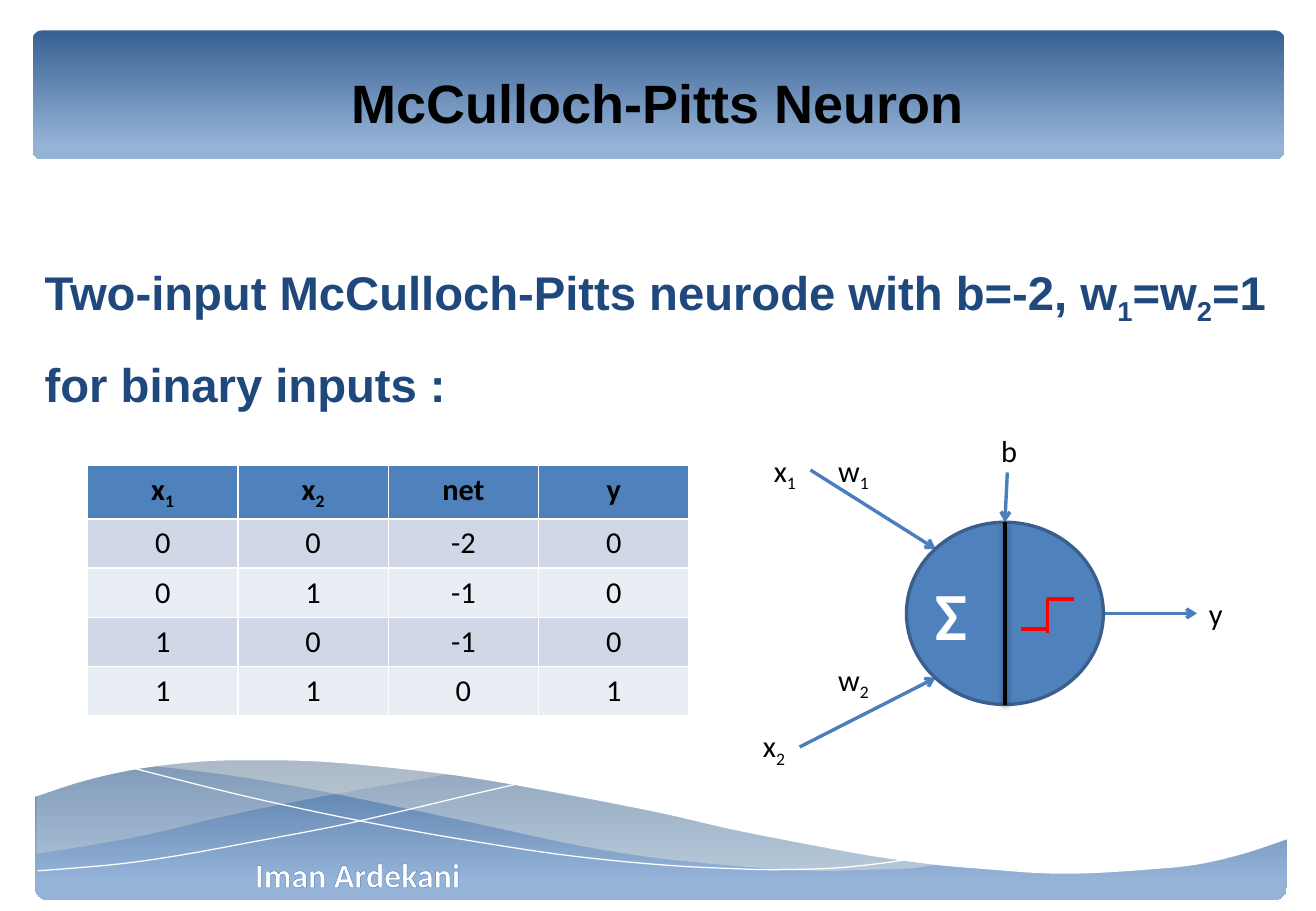
from lxml import etree
from pptx import Presentation
from pptx.dml.color import RGBColor
from pptx.enum.shapes import MSO_CONNECTOR, MSO_SHAPE
from pptx.enum.text import MSO_ANCHOR, PP_ALIGN
from pptx.oxml.ns import qn
from pptx.util import Inches, Pt

STRAIGHT = MSO_CONNECTOR.STRAIGHT
ROUNDED, OVAL = MSO_SHAPE.ROUNDED_RECTANGLE, MSO_SHAPE.OVAL
MIDDLE = MSO_ANCHOR.MIDDLE
LEFT, CENTER = PP_ALIGN.LEFT, PP_ALIGN.CENTER

BLACK = RGBColor(0x00, 0x00, 0x00)
WHITE = RGBColor(0xFF, 0xFF, 0xFF)
RED = RGBColor(0xFF, 0x00, 0x00)
NAVY = RGBColor(0x1F, 0x49, 0x7D)
BLUE = RGBColor(0x4F, 0x81, 0xBD)
BLUE_EDGE = RGBColor(0x3A, 0x5F, 0x8C)
ARROW_BLUE = RGBColor(0x4B, 0x7E, 0xBC)
BAR_DARK = RGBColor(0x37, 0x60, 0x92)
BAR_LIGHT = RGBColor(0x95, 0xB3, 0xD7)
CREAM = RGBColor(0xEE, 0xEC, 0xE1)
BANDS = [RGBColor(0xD0, 0xD8, 0xE8), RGBColor(0xE9, 0xED, 0xF4)]

TITLE = "McCulloch-Pitts Neuron"
STATEMENT = "Two-input McCulloch-Pitts neurode with b=-2, w_1=w_2=1 for binary inputs :"
AUTHOR = "Iman Ardekani"
TRUTH_TABLE = [
    ("x_1", "x_2", "net", "y"),
    ("0", "0", "-2", "0"),
    ("0", "1", "-1", "0"),
    ("1", "0", "-1", "0"),
    ("1", "1", "0", "1"),
]
LABELS = [
    ("x_1", 6.27, 3.67, 0.4), ("w_1", 6.8, 3.67, 0.47), ("b", 8.14, 3.51, 0.34),
    ("y", 9.85, 4.85, 0.32), ("x_2", 6.18, 5.94, 0.4), ("w_2", 6.8, 5.39, 0.47),
]
ARROWS = [
    (6.67, 3.87, 7.7, 4.52), (9.09, 5.05, 9.85, 5.05),
    (8.29, 3.89, 8.27, 4.3), (6.58, 6.15, 7.7, 5.58),
]
STEP_LINES = [
    (8.84, 4.93, 8.62, 4.93), (8.62, 4.93, 8.62, 5.21), (8.62, 5.18, 8.4, 5.18),
]
BARS = [(0.27, 0.25, 10.3, 1.06), (0.29, 5.85, 10.3, 1.56)]

LEFT_VEIL = [
    [(0.3, 7.03), (0.74, 6.96), (1.22, 6.87), (1.85, 6.72), (2.43, 6.6),
     (2.97, 6.5), (3.71, 6.37)],
    [(3.71, 6.37), (3.24, 6.31), (2.67, 6.27), (2.17, 6.25), (1.72, 6.26),
     (1.33, 6.29), (0.98, 6.35), (0.66, 6.43), (0.3, 6.55)],
]
RIGHT_VEIL = [
    [(1.2, 6.3), (1.8, 6.37), (2.47, 6.48), (3.22, 6.63), (4.06, 6.81),
     (4.71, 6.95), (5.3, 7.05), (5.84, 7.11), (6.32, 7.15), (6.76, 7.17),
     (7.14, 7.16), (7.48, 7.15), (7.77, 7.11)],
    [(7.77, 7.11), (7.16, 7.03), (6.49, 6.91), (6, 6.81), (5.13, 6.62),
     (4.36, 6.47), (3.66, 6.36), (3.05, 6.29), (2.5, 6.25), (2.01, 6.24),
     (1.58, 6.26), (1.2, 6.3)],
]
LONG_THREAD = [
    (1.04, 6.31), (1.87, 6.52), (2.63, 6.69), (3.34, 6.83), (3.98, 6.94),
    (4.57, 7.03), (5.1, 7.09), (5.58, 7.13), (6, 7.15), (6.36, 7.16),
    (6.81, 7.15), (7.15, 7.12), (7.52, 7.07),
]
SHORT_THREAD = [
    (4.23, 6.46), (3.8, 6.56), (3.34, 6.67), (2.77, 6.8), (2.14, 6.92),
    (1.49, 7.04), (1.01, 7.11), (0.57, 7.15), (0.31, 7.17),
]
CREST = [
    (0.29, 6.56), (0.69, 6.43), (1.14, 6.33), (1.66, 6.27), (2.11, 6.26),
    (2.62, 6.27), (3.2, 6.32), (3.86, 6.4), (4.6, 6.53), (5.42, 6.69),
    (6.03, 6.83), (6.64, 6.95), (7.19, 7.05), (7.7, 7.12), (8.16, 7.16),
    (8.58, 7.19), (8.96, 7.19), (9.44, 7.16), (9.84, 7.12), (10.23, 7.03),
    (10.62, 6.9),
]
SKY = [(10.62, 6.9), (10.62, 5.73), (0.29, 5.73)]


def smooth(knots, steps=5):
    padded = [knots[0], *knots, knots[-1]]
    points = []
    for a, b, c, d in zip(padded, padded[1:], padded[2:], padded[3:]):
        for step in range(steps):
            t = step / steps
            points.append(tuple(
                q + 0.5 * t * (r - p + t * (2 * p - 5 * q + 4 * r - s
                                            + t * (3 * (q - r) + s - p)))
                for p, q, r, s in zip(a, b, c, d)))
    return points + [knots[-1]]


def add_outline(page, points, fill=None, opacity=100):
    emu = [(Inches(x), Inches(y)) for x, y in points]
    builder = page.shapes.build_freeform(*emu[0])
    builder.add_line_segments(emu[1:], close=fill is not None)
    shape = builder.convert_to_shape()
    shape.shadow.inherit = False
    if fill is None:
        shape.fill.background()
        shape.line.color.rgb = WHITE
        shape.line.width = Pt(0)
        return
    shape.fill.solid()
    shape.fill.fore_color.rgb = fill
    shape.line.fill.background()
    if opacity < 100:
        color = shape._element.spPr.find(".//" + qn("a:srgbClr"))
        etree.SubElement(color, qn("a:alpha"), val=str(opacity * 1000))


def add_bar(page, frame):
    bar = page.shapes.add_shape(ROUNDED, *map(Inches, frame))
    bar.adjustments[0] = 0.07
    bar.shadow.inherit = False
    bar.line.fill.background()
    bar.fill.gradient()
    bar.fill.gradient_angle = 270
    for stop, color, position in zip(bar.fill.gradient_stops, (BAR_DARK, BAR_LIGHT), (0, 0.9)):
        stop.color.rgb = color
        stop.position = position


def write(frame, text, size, color, font="Calibri", bold=False, align=LEFT):
    para = frame.paragraphs[0]
    para.alignment = align
    para.font.name, para.font.size, para.font.bold = font, Pt(size), bold
    para.font.color.rgb = color
    head, *rest = text.split("_")
    pieces = [(head, False)]
    for part in rest:
        pieces += [(part[0], True), (part[1:], False)]
    for piece, lowered in pieces:
        if piece:
            span = para.add_run()
            span.text = piece
            if lowered:
                span.font._element.set("baseline", "-25000")
    return para


def add_label(page, text, frame, size, color, wrap=False, **style):
    box = page.shapes.add_textbox(*map(Inches, frame))
    box.text_frame.word_wrap = wrap
    return write(box.text_frame, text, size, color, **style)


def add_line(page, ends, color, width, arrow=False):
    line = page.shapes.add_connector(STRAIGHT, *map(Inches, ends))
    line.line.color.rgb = color
    line.line.width = Pt(width)
    if arrow:
        etree.SubElement(line.line._get_or_add_ln(), qn("a:tailEnd"), type="arrow")
    return etree.SubElement(line._element.spPr, qn("a:effectLst"))


def add_backdrop(page):
    for frame in BARS:
        add_bar(page, frame)
    for veil, opacity in ((LEFT_VEIL, 29), (RIGHT_VEIL, 40)):
        add_outline(page, smooth(veil[0]) + smooth(veil[1]), CREAM, opacity)
    for thread in (LONG_THREAD, SHORT_THREAD):
        add_outline(page, smooth(thread))
    add_outline(page, smooth(CREST) + SKY, WHITE)
    author = add_label(page, AUTHOR, (2, 6.98, 2.13, 0.44), 20, WHITE, wrap=True, bold=True)
    edge = etree.Element(qn("a:ln"), w=str(Pt(0.8)))
    fill = etree.SubElement(edge, qn("a:solidFill"))
    etree.SubElement(fill, qn("a:srgbClr"), val=str(BLUE))
    author.runs[0].font._element.insert(0, edge)


def add_truth_table(page):
    rows, columns = len(TRUTH_TABLE), len(TRUTH_TABLE[0])
    table = page.shapes.add_table(
        rows, columns, *map(Inches, (0.72, 3.83, 4.95, 2.03))).table
    for row, values in enumerate(TRUTH_TABLE):
        for column, value in enumerate(values):
            cell = table.cell(row, column)
            cell.fill.solid()
            cell.fill.fore_color.rgb = BANDS[(row - 1) % 2] if row else BLUE
            write(cell.text_frame, value, 18, BLACK, bold=row == 0, align=CENTER)


def add_neuron(page):
    for ends in ARROWS:
        add_line(page, ends, ARROW_BLUE, 2, arrow=True)
    for text, left, top, width in LABELS:
        add_label(page, text, (left, top, width, 0.4), 18, BLACK)
    body = page.shapes.add_shape(OVAL, *map(Inches, (7.46, 4.3, 1.62, 1.5)))
    body.shadow.inherit = False
    body.fill.solid()
    body.fill.fore_color.rgb = BLUE
    body.line.color.rgb = BLUE_EDGE
    body.line.width = Pt(2)
    body.text_frame.margin_left = body.text_frame.margin_right = 0
    body.text_frame.vertical_anchor = MIDDLE
    write(body.text_frame, "Σ", 40, WHITE, bold=True)
    effects = add_line(page, (8.27, 4.3, 8.27, 5.8), BLACK, 2.25)
    shadow = etree.SubElement(effects, qn("a:outerShdw"), blurRad="40000", dist="20000",
                              dir="5400000", rotWithShape="0")
    color = etree.SubElement(shadow, qn("a:srgbClr"), val=str(BLACK))
    etree.SubElement(color, qn("a:alpha"), val="38000")
    for ends in STEP_LINES:
        add_line(page, ends, RED, 2.25)


def main():
    deck = Presentation()
    deck.slide_width, deck.slide_height = Inches(10.83), Inches(7.5)
    page = deck.slides.add_slide(deck.slide_layouts[5])
    add_backdrop(page)
    title = page.shapes.title
    title.left, title.top, title.width, title.height = map(Inches, (0.54, 0.37, 9.75, 0.94))
    title.text_frame.vertical_anchor = MIDDLE
    write(title.text_frame, TITLE, 32, BLACK, font="Arial", bold=True, align=CENTER)
    page.shapes._spTree.append(title._element)
    statement = add_label(page, STATEMENT, (0.27, 1.85, 10.3, 1.64), 28, NAVY,
                          wrap=True, font="Arial", bold=True)
    statement.line_spacing = 1.5
    add_truth_table(page)
    add_neuron(page)
    deck.save("out.pptx")


if __name__ == "__main__":
    main()
